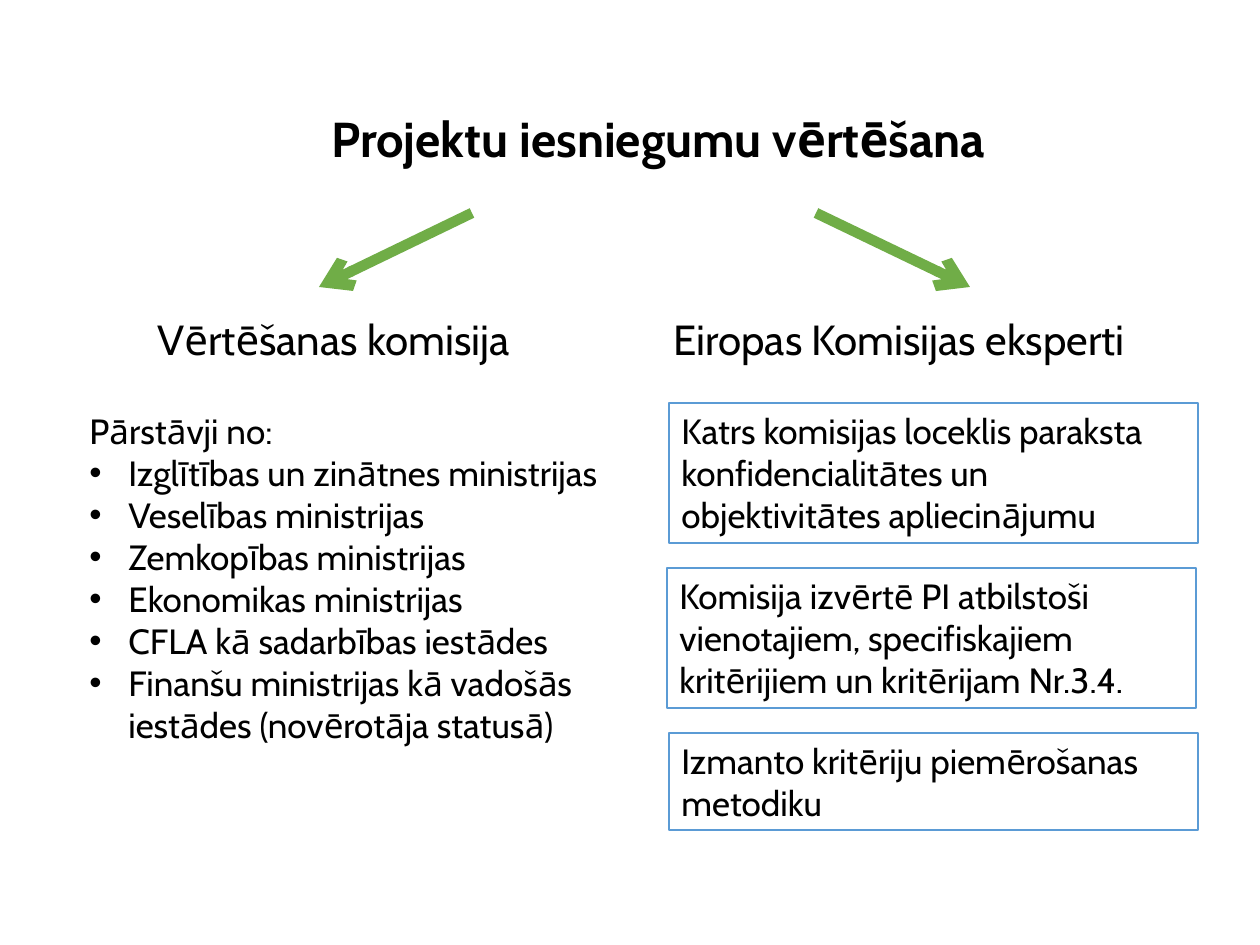
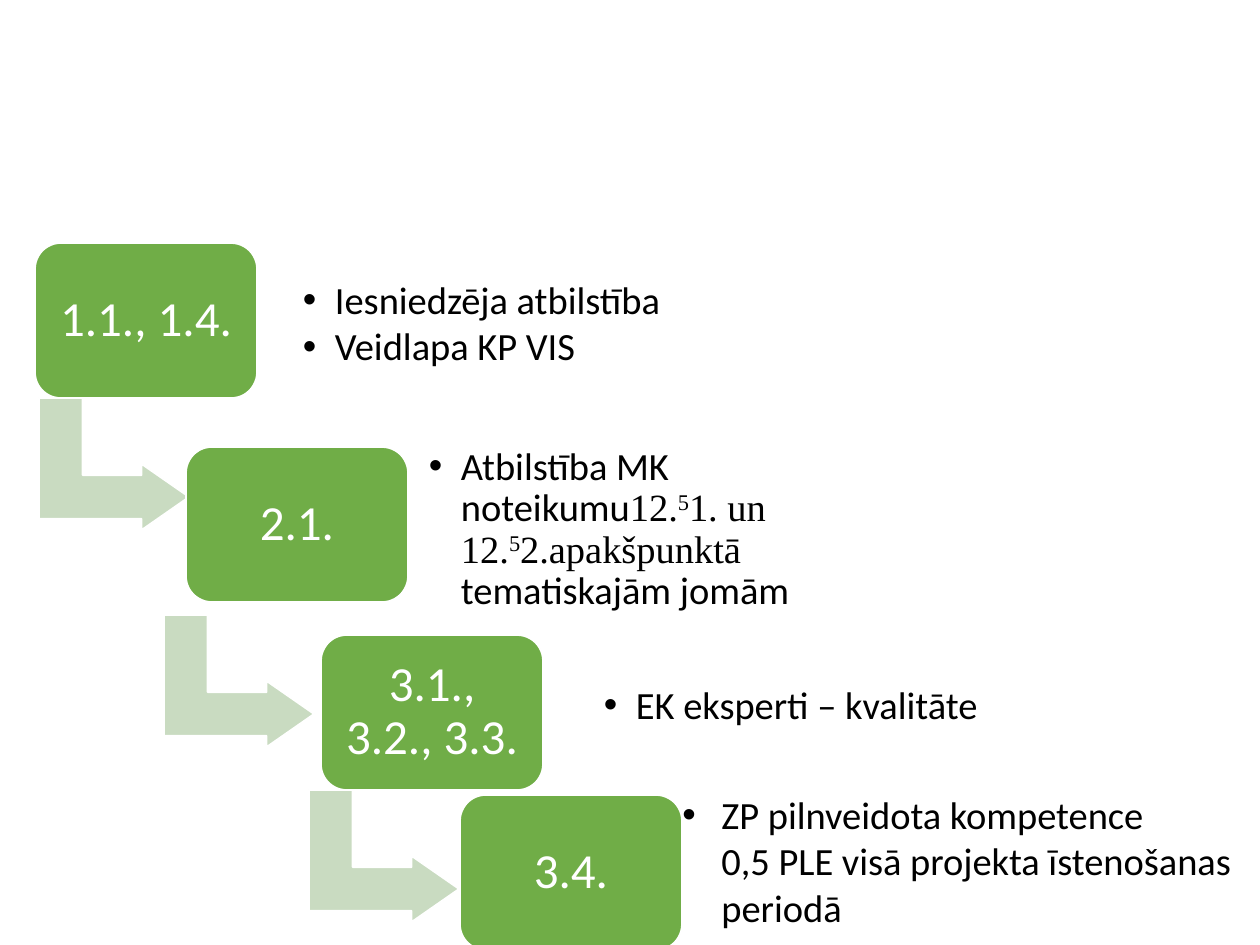
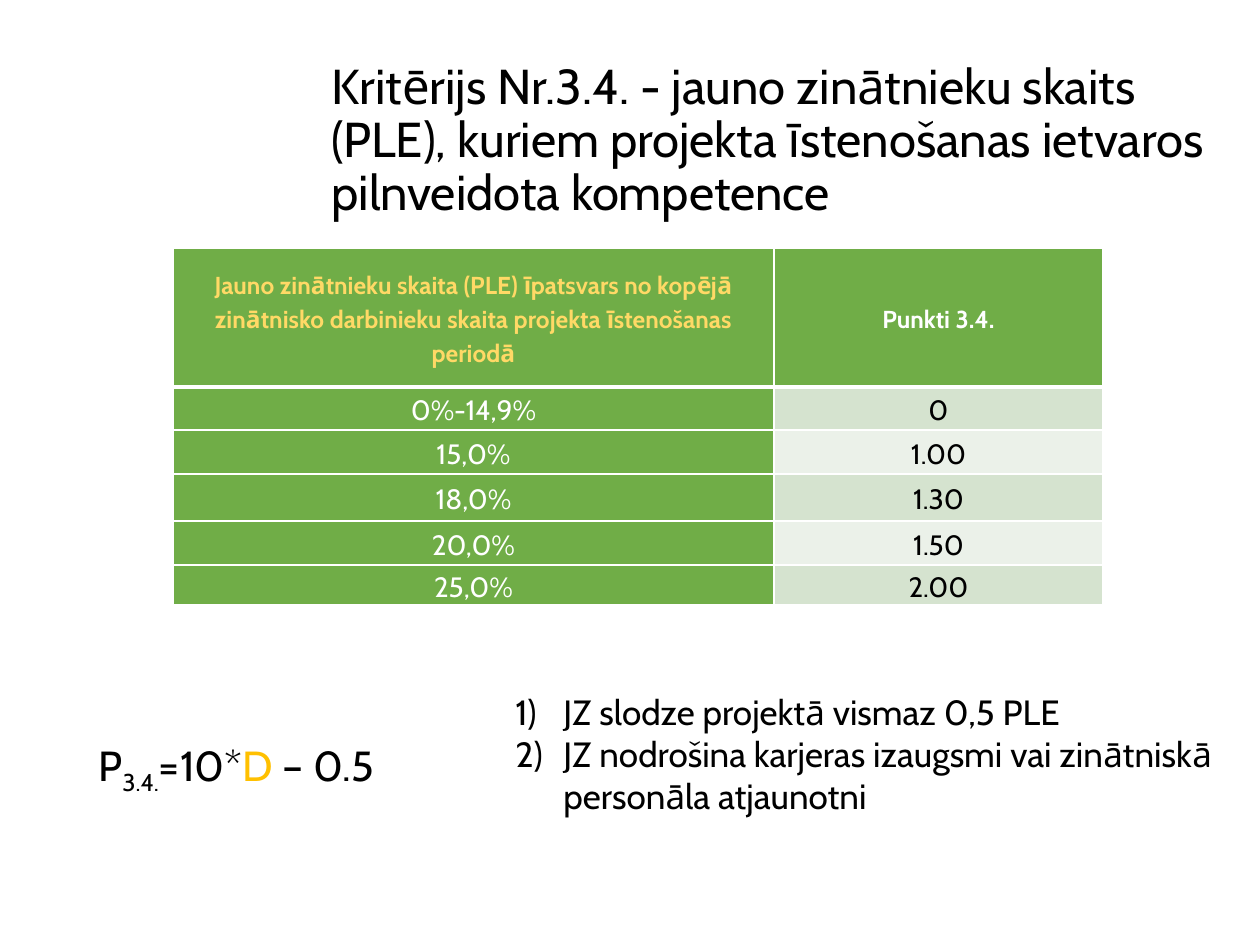
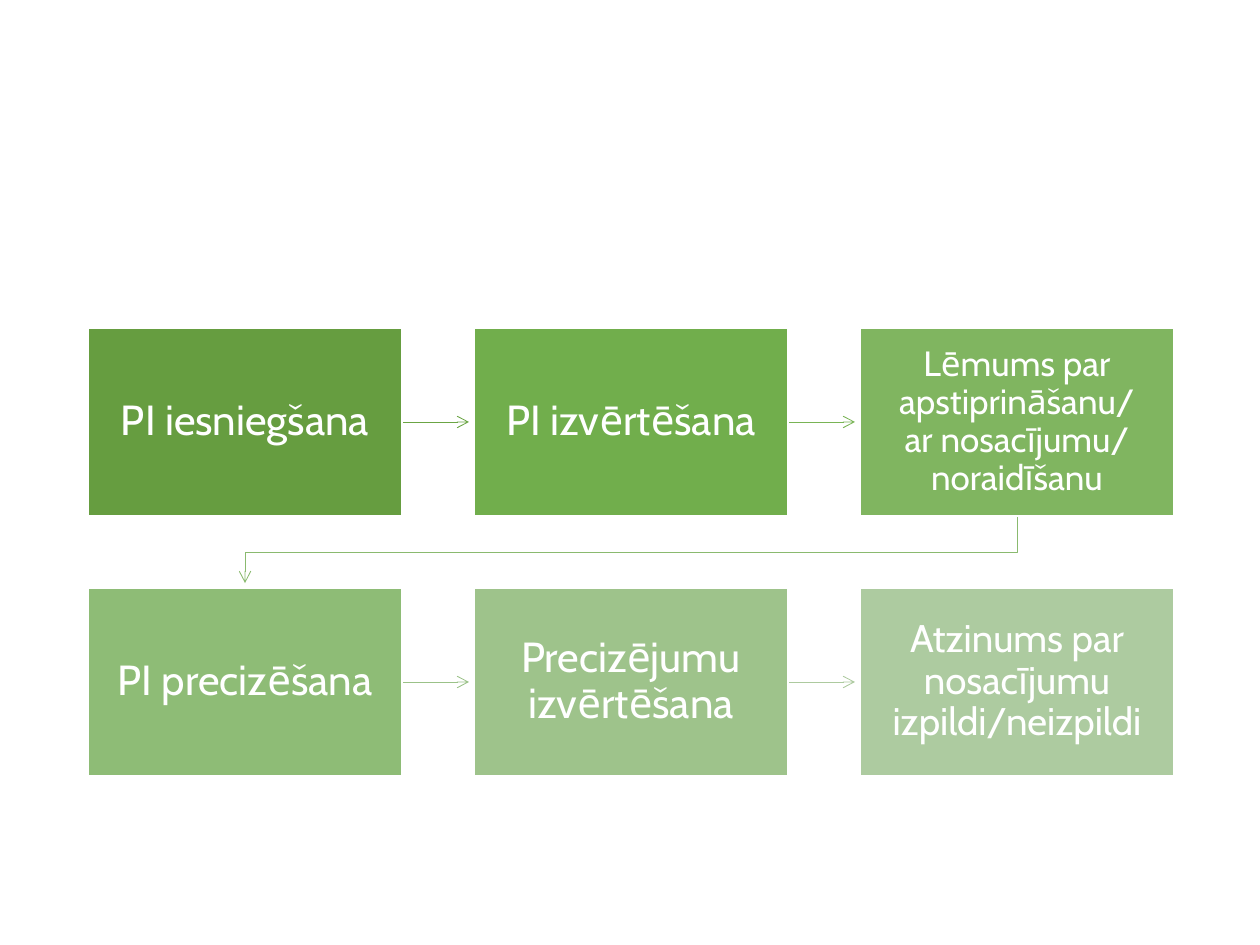
import pptx
import pptx.dml.color
import pptx.enum.shapes
import pptx.enum.text
import pptx.oxml
import pptx.oxml.ns
import pptx.util
from lxml import etree

PX = 914400 / 126
SLIDE_SIZE = (1260, 945)
BLACK, WHITE, GREEN = "000000", "FFFFFF", "70AD47"
PALE_GREEN, BLUE, YELLOW, GOLD = "C9DBC1", "5B9BD5", "FFD966", "FFC000"
BAND_COLORS = ("D5E3CF", "EBF1E9")
SHAPES = pptx.enum.shapes.MSO_SHAPE
STRAIGHT = pptx.enum.shapes.MSO_CONNECTOR.STRAIGHT
CENTER = pptx.enum.text.PP_ALIGN.CENTER
LEFT = pptx.enum.text.PP_ALIGN.LEFT
MIDDLE = pptx.enum.text.MSO_ANCHOR.MIDDLE
TOP = pptx.enum.text.MSO_ANCHOR.TOP
TITLE_LEFT, TITLE_TOP, TITLE_HEIGHT = 319, 50, 183

# Slide 1
EVALUATION_TITLE = "Projektu iesniegumu vērtēšana"
BRANCH_ARROWS = [((472, 213), (319, 287)), ((816, 213), (970, 287))]
BRANCHES = [
    ("Vērtēšanas komisija", (145, 307, 427, 63)),
    ("Eiropas Komisijas eksperti", (661, 307, 512, 63)),
]
MEMBERS = [
    "Pārstāvji no:",
    "Izglītības un zinātnes ministrijas",
    "Veselības ministrijas",
    "Zemkopības ministrijas",
    "Ekonomikas ministrijas",
    "CFLA kā sadarbības iestādes",
    "Finanšu ministrijas kā vadošās iestādes (novērotāja statusā)",
]
RULES = [
    ("Katrs komisijas loceklis paraksta konfidencialitātes un "
     "objektivitātes apliecinājumu", (669, 403, 529, 140)),
    ("Komisija izvērtē PI atbilstoši vienotajiem, specifiskajiem "
     "kritērijiem un kritērijam Nr.3.4.", (667, 568, 529, 140)),
    ("Izmanto kritēriju piemērošanas metodiku", (669, 733, 529, 97)),
]

# Slide 2
TIMES, RAISED = {"font": "Times New Roman"}, {"font": "Times New Roman", "baseline": 30}
STEP_SIZE, TURN_SIZE = (222, 155), (132, 150)
STEPS = [
    ("1.1., 1.4.", (35, 243)),
    ("2.1.", (186, 447)),
    ("3.1., 3.2., 3.3.", (321, 635)),
    ("3.4.", (460, 795)),
]
TURNS = [(48, 389), (173, 606), (318, 781)]
STEP_NOTES = [
    (["Iesniedzēja atbilstība", "Veidlapa KP VIS"], (292, 262, 611, 126)),
    ([[("Atbilstība MK noteikumu", {}), ("12.", TIMES), ("5", RAISED),
       ("1. un 12.", TIMES), ("5", RAISED), ("2.apakšpunktā ", TIMES),
       ("tematiskajām jomām", {})]], (418, 428, 512, 204)),
    (["EK eksperti – kvalitāte"], (593, 644, 627, 126)),
]
LAST_NOTE = "ZP pilnveidota kompetence\n0,5 PLE visā projekta īstenošanas periodā"

# Slide 3
CRITERION_TITLE = ("Kritērijs Nr.3.4. - jauno zinātnieku skaits (PLE), kuriem "
                   "projekta īstenošanas ietvaros pilnveidota kompetence")
POINTS = [
    ("Jauno zinātnieku skaita (PLE) īpatsvars no kopējā zinātnisko "
     "darbinieku skaita projekta īstenošanas periodā", "Punkti 3.4."),
    ("0%-14,9%", "0"),
    ("15,0%", "1.00"),
    ("18,0%", "1.30"),
    ("20,0%", "1.50"),
    ("25,0%", "2.00"),
]
POINT_COLUMNS = (601, 329)
POINT_ROWS = (139, 43, 44, 47, 44, 40)
FORMULA = [("P", {}), ("3.4.", {"baseline": -25}), ("=10*", {}),
           ("D", {"color": GOLD}), (" – 0.5", {})]
CONDITIONS = [
    "JZ slodze projektā vismaz 0,5 PLE",
    "JZ nodrošina karjeras izaugsmi vai zinātniskā personāla atjaunotni",
]

# Slide 4: text, size, inset, fill, colour of the arrow that leaves the stage
STAGES = [
    ("PI iesniegšana", 24, 24, "669D40", "6BA544"),
    ("PI izvērtēšana", 24, 24, "71AE4C", "79B455"),
    ("Lēmums par apstiprināšanu/\nar nosacījumu/\nnoraidīšanu", 20, 20, "80B560", "8ABA6F"),
    ("PI precizēšana", 24, 24, "8EBC76", "9BC288"),
    ("Precizējumu izvērtēšana", 24, 24, "9EC38B", "ADCA9F"),
    ("Atzinums par nosacījumu izpildi/neizpildi", 22, 21, "ADCBA0", None),
]
STAGE_COLUMNS = 3
STAGE_LEFT, STAGE_TOP, STAGE_WIDTH, STAGE_HEIGHT = 88, 328, 314, 188
STAGE_PITCH_X, STAGE_PITCH_Y = 386, 260


def px(length):
    return pptx.util.Emu(round(length * PX))


def rgb(color):
    return pptx.dml.color.RGBColor.from_string(color)


def drawing_element(tag, **attributes):
    element = pptx.oxml.parse_xml(f"<a:{tag} {pptx.oxml.ns.nsdecls('a')}/>")
    for key, value in attributes.items():
        element.set(key, str(value))
    return element


def add_bullet(paragraph, indent, numbered):
    properties = paragraph._p.get_or_add_pPr()
    properties.set("marL", str(px(indent)))
    properties.set("indent", str(-px(indent)))
    if numbered:
        properties.append(drawing_element("buAutoNum", type="arabicParenR"))
    else:
        properties.append(drawing_element("buFont", typeface="Arial"))
        properties.append(drawing_element("buChar", char="•"))


def write(frame, paragraphs, size, color=BLACK, font="Cabin", bold=False, align=LEFT,
          spacing=1.0, after=0, anchor=TOP, inset=None, indent=0, bullets_from=0,
          numbered=False):
    """Fill a frame; a paragraph is a string or a list of (text, run changes)."""
    frame.word_wrap = True
    frame.vertical_anchor = anchor
    if inset is not None:
        frame.margin_left = frame.margin_right = px(inset)
        frame.margin_top = frame.margin_bottom = px(inset)
    for index, content in enumerate(paragraphs):
        paragraph = frame.add_paragraph() if index else frame.paragraphs[0]
        paragraph.alignment = align
        paragraph.line_spacing = spacing
        paragraph.space_after = pptx.util.Pt(after)
        if indent and index >= bullets_from:
            add_bullet(paragraph, indent, numbered)
        if isinstance(content, str):
            paragraph.text = content
            changes = [{}] * len(paragraph.runs)
        else:
            for text, _ in content:
                paragraph.add_run().text = text
            changes = [change for _, change in content]
        for run, change in zip(paragraph.runs, changes):
            run.font.size = pptx.util.Pt(size)
            run.font.bold = bold
            run.font.name = change.get("font", font)
            run.font.color.rgb = rgb(change.get("color", color))
            if "baseline" in change:
                run._r.get_or_add_rPr().set("baseline", str(change["baseline"] * 1000))


def add_text(slide, box, paragraphs, size, **style):
    write(slide.shapes.add_textbox(*map(px, box)).text_frame, paragraphs, size, **style)


def add_title(slide, title, width, bold=False):
    add_text(slide, (TITLE_LEFT, TITLE_TOP, width, TITLE_HEIGHT), [title], 28,
             bold=bold, spacing=0.9, anchor=MIDDLE)


def add_block(slide, preset, box, fill=None, line=WHITE):
    block = slide.shapes.add_shape(preset, *map(px, box))
    block.shadow.inherit = False
    if fill:
        block.fill.solid()
        block.fill.fore_color.rgb = rgb(fill)
    else:
        block.fill.background()
    block.line.color.rgb = rgb(line)
    block.line.width = pptx.util.Pt(1)
    return block


def add_arrow(slide, points, color, width):
    """Draw an arrow through the points: a connector, or a bent open outline."""
    if len(points) == 2:
        arrow = slide.shapes.add_connector(STRAIGHT, *map(px, points[0] + points[1]))
        arrow.element.spPr.append(drawing_element("effectLst"))
    else:
        builder = slide.shapes.build_freeform(*points[0], scale=PX)
        builder.add_line_segments(points[1:], close=False)
        arrow = builder.convert_to_shape()
        arrow.shadow.inherit = False
        arrow.fill.background()
    arrow.line.color.rgb = rgb(color)
    arrow.line.width = pptx.util.Pt(width)
    outline = arrow.element.spPr.find(pptx.oxml.ns.qn("a:ln"))
    outline.append(drawing_element("tailEnd", type="arrow"))


def border_cell(cell, widths):
    """Give the left, right, top and bottom borders their widths in points."""
    properties = cell._tc.get_or_add_tcPr()
    for index, (side, width) in enumerate(zip("LRTB", widths)):
        border = drawing_element(f"ln{side}", w=pptx.util.Pt(width))
        fill = etree.SubElement(border, pptx.oxml.ns.qn("a:solidFill"))
        etree.SubElement(fill, pptx.oxml.ns.qn("a:srgbClr")).set("val", WHITE)
        properties.insert(index, border)


def build_evaluation(slide):
    add_title(slide, EVALUATION_TITLE, 854, bold=True)
    for points in BRANCH_ARROWS:
        add_arrow(slide, points, GREEN, 6)
    for branch, box in BRANCHES:
        add_text(slide, box, [branch], 24)
    add_text(slide, (77, 403, 586, 352), MEMBERS, 20, indent=39, bullets_from=1)
    for rule, box in RULES:
        block = add_block(slide, SHAPES.RECTANGLE, box, line=BLUE)
        write(block.text_frame, [rule], 20)


def build_steps(slide):
    for corner in TURNS:
        turn = add_block(slide, SHAPES.BENT_UP_ARROW, corner + TURN_SIZE, PALE_GREEN)
        turn.rotation = 90
        for index, value in enumerate((0.33, 0.25, 0.36)):
            turn.adjustments[index] = value
    for step, corner in STEPS:
        block = add_block(slide, SHAPES.ROUNDED_RECTANGLE, corner + STEP_SIZE, GREEN)
        write(block.text_frame, [step], 28, color=WHITE, font="Calibri", align=CENTER,
              spacing=0.9, anchor=MIDDLE, inset=15)
    for notes, box in STEP_NOTES:
        add_text(slide, box, notes, 22, font="Calibri", spacing=0.9, after=3,
                 anchor=MIDDLE, inset=11, indent=32)
    add_text(slide, (670, 785, 576, 152), [LAST_NOTE], 22, font="Calibri", indent=39)


def build_criterion(slide):
    add_title(slide, CRITERION_TITLE, 920)
    box = (173, 248, sum(POINT_COLUMNS), sum(POINT_ROWS))
    points = slide.shapes.add_table(len(POINT_ROWS), len(POINT_COLUMNS), *map(px, box)).table
    for column, width in zip(points.columns, POINT_COLUMNS):
        column.width = px(width)
    for r, (height, texts) in enumerate(zip(POINT_ROWS, POINTS)):
        points.rows[r].height = px(height)
        for c, text in enumerate(texts):
            cell = points.cell(r, c)
            header, banded = r == 0, r > 0 and c == 1
            cell.fill.solid()
            cell.fill.fore_color.rgb = rgb(BAND_COLORS[(r - 1) % 2] if banded else GREEN)
            border_cell(cell, (1, 1, 3 if r == 1 else 1, 3 if header else 1))
            color = BLACK if banded else YELLOW if header and c == 0 else WHITE
            write(cell.text_frame, [text], 14 if header else 16, color=color,
                  bold=header, align=CENTER, spacing=1.15)
            cell.vertical_anchor = MIDDLE
            cell.margin_left = cell.margin_right = px(9)
            cell.margin_top = cell.margin_bottom = 0
    add_text(slide, (86, 733, 383, 63), [FORMULA], 24)
    add_text(slide, (503, 684, 757, 183), CONDITIONS, 20, indent=48, numbered=True)


def build_stages(slide):
    for index, (stage, size, inset, fill, arrow_color) in enumerate(STAGES):
        row, column = divmod(index, STAGE_COLUMNS)
        left = STAGE_LEFT + column * STAGE_PITCH_X
        top = STAGE_TOP + row * STAGE_PITCH_Y
        right, bottom = left + STAGE_WIDTH, top + STAGE_HEIGHT
        next_top = top + STAGE_PITCH_Y
        if arrow_color and column < STAGE_COLUMNS - 1:
            middle = top + STAGE_HEIGHT // 2
            next_left = left + STAGE_PITCH_X
            add_arrow(slide, [(right, middle), (next_left - 5, middle)], arrow_color, 0.5)
        elif arrow_color:
            start, end = left + STAGE_WIDTH // 2, STAGE_LEFT + STAGE_WIDTH // 2
            turn = (bottom + next_top) // 2
            add_arrow(slide, [(start, bottom), (start, turn), (end, turn),
                              (end, next_top - 5)], arrow_color, 0.5)
        block = add_block(slide, SHAPES.RECTANGLE,
                          (left, top, STAGE_WIDTH, STAGE_HEIGHT), fill)
        write(block.text_frame, [stage], size, color=WHITE, align=CENTER,
              spacing=0.9, anchor=MIDDLE, inset=inset)


def main():
    deck = pptx.Presentation()
    deck.slide_width, deck.slide_height = map(px, SLIDE_SIZE)
    for build in (build_evaluation, build_steps, build_criterion, build_stages):
        build(deck.slides.add_slide(deck.slide_layouts[6]))
    deck.save("out.pptx")


if __name__ == "__main__":
    main()
